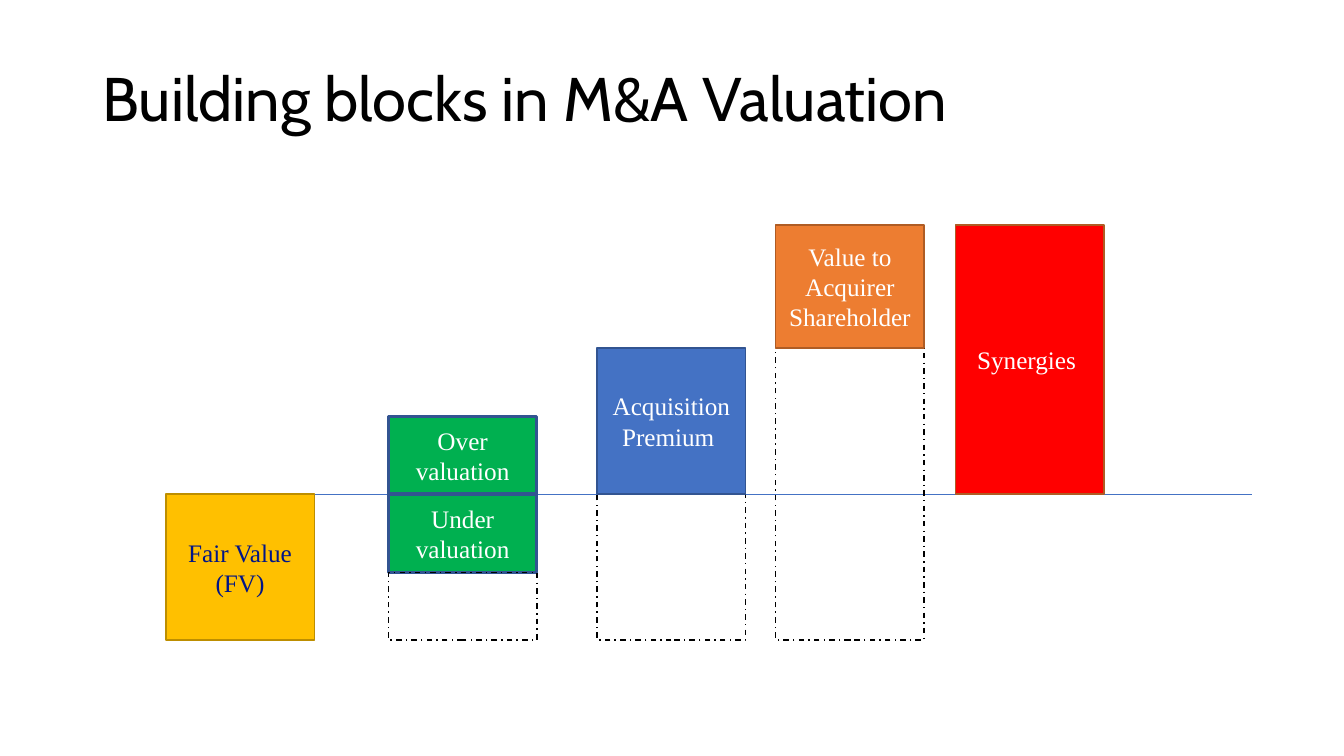
from dataclasses import dataclass

from lxml import etree
from pptx import Presentation
from pptx import util as u
from pptx.dml.color import RGBColor
from pptx.enum import dml, shapes, text
from pptx.oxml import ns


@dataclass(frozen=True)
class Theme:
    head: str = "Cabin"
    body: str = "Times New Roman"
    big: float = 44
    small: float = 18
    thin: float = 0.5
    edge: float = 1
    thick: float = 2.25
    black: str = "000000"
    white: str = "FFFFFF"
    navy: str = "011587"
    gold: str = "FFC000"
    bronze: str = "BD8E00"
    green: str = "00B050"
    blue: str = "4472C4"
    steel: str = "325491"
    orange: str = "ED7D31"
    rust: str = "AF5C24"
    red: str = "FF0000"


T = Theme()

# Heights below the top of the chart, in cm
TOP, PRICE, OVER, BASE, UNDER, FLOOR = 0, 3.1, 4.82, 6.78, 8.76, 10.46
# Left edges of the five columns, in cm
FAIR, MARKET, BID, GAIN, TOTAL = 0, 5.61, 10.87, 15.37, 19.9
WIDE = 3.74

# column, top, bottom, label, fill, line, line width, ink
BLOCKS = [
    (FAIR, BASE, FLOOR, "Fair Value (FV)", T.gold, T.bronze, T.edge, T.navy),
    (MARKET, BASE, UNDER, "Under valuation", T.green, T.steel, T.thick, T.white),
    (BID, BASE, FLOOR, None, None, T.black, T.edge, None),
    (BID, PRICE, BASE, "Acquisition Premium ", T.blue, T.steel, T.edge, T.white),
    (GAIN, PRICE, FLOOR, None, None, T.black, T.edge, None),
    (GAIN, TOP, PRICE, "Value to Acquirer Shareholder", T.orange, T.rust, T.edge, T.white),
    (TOTAL, TOP, BASE, "Synergies ", T.red, T.rust, T.edge, T.white),
    (MARKET, OVER, BASE, "Over valuation", T.green, T.steel, T.thick, T.white),
    (MARKET, UNDER, FLOOR, None, None, T.black, T.edge, None),
]


def rgb(code):
    return RGBColor.from_string(code)


def write(frame, words, face, size, ink, align):
    frame.word_wrap = True
    frame.vertical_anchor = text.MSO_ANCHOR.MIDDLE
    para = frame.paragraphs[0]
    para.text = words
    para.alignment = align
    para.font.name = face
    para.font.size = u.Pt(size)
    para.font.color.rgb = rgb(ink)
    return para


def title(slide, left, top, width, height):
    box = slide.shapes.add_textbox(*map(u.Cm, (left, top, width, height)))
    para = write(box.text_frame, "Building blocks in M&A Valuation",
                 T.head, T.big, T.black, text.PP_ALIGN.LEFT)
    para.line_spacing = 0.9


def block(slide, left, top, height, label, fill, line, weight, ink):
    """Draw a filled block, or a dashed empty one when there is no fill."""
    rect = slide.shapes.add_shape(
        shapes.MSO_SHAPE.RECTANGLE, *map(u.Cm, (left, top, WIDE, height)))
    rect.shadow.inherit = False
    rect.line.color.rgb = rgb(line)
    rect.line.width = u.Pt(weight)
    if fill:
        rect.fill.solid()
        rect.fill.fore_color.rgb = rgb(fill)
        write(rect.text_frame, label, T.body, T.small, ink,
              text.PP_ALIGN.CENTER)
    else:
        rect.fill.background()
        rect.line.dash_style = dml.MSO_LINE.DASH_DOT


def axis(slide, left, right, level):
    rule = slide.shapes.add_connector(
        shapes.MSO_CONNECTOR.STRAIGHT,
        *map(u.Cm, (left, level, right, level)))
    rule.line.color.rgb = rgb(T.blue)
    rule.line.width = u.Pt(T.thin)
    etree.SubElement(rule.element.spPr, ns.qn("a:effectLst"))


def chart(slide, left, top, width):
    axis(slide, left + FAIR + WIDE, left + width, top + BASE)
    for col, high, low, *look in BLOCKS:
        block(slide, left + col, top + high, low - high, *look)


def main():
    deck = Presentation()
    deck.slide_width, deck.slide_height = u.Cm(33.87), u.Cm(19.05)
    slide = deck.slides.add_slide(deck.slide_layouts[6])
    title(slide, 2.33, 1.01, 29.21, 3.1)
    chart(slide, 4.18, 5.67, 27.38)
    deck.save("out.pptx")


if __name__ == "__main__":
    main()
